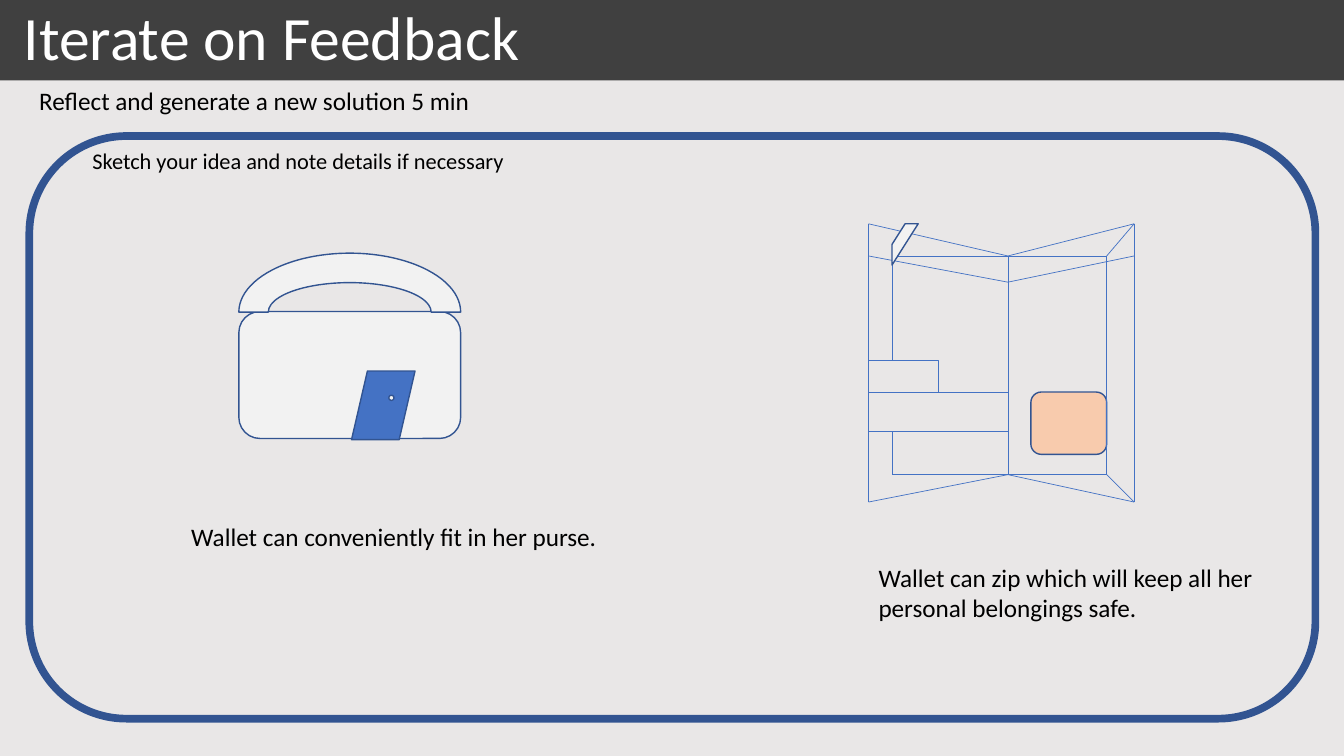
import pptx
import pptx.dml.color
import pptx.enum.shapes
import pptx.enum.text
import pptx.oxml.ns
import pptx.util

Cm, Pt = pptx.util.Cm, pptx.util.Pt
Kind = pptx.enum.shapes.MSO_SHAPE
Link = pptx.enum.shapes.MSO_CONNECTOR
Fit = pptx.enum.text.MSO_AUTO_SIZE
Anchor = pptx.enum.text.MSO_ANCHOR
Align = pptx.enum.text.PP_ALIGN

THEME = {
    "font": "Calibri",
    "color": {"page": "E9E7E7", "bar": "404040", "edge": "325491", "pale": "F2F2F2",
              "blue": "4472C4", "peach": "F8CBAD", "ink": "000000", "white": "FFFFFF"},
    "size": {"title": 44, "body": 18, "hint": 16},
    "line": {"frame": 5.5, "edge": 1, "fold": 0.5},
}

# Content: lengths in cm, boxes as left, top, width, height
WIDE, HIGH = 33.87, 19.05
TITLE = "Iterate on Feedback"
BAR = (0, 0, WIDE, 2.03)
FRAME = (0.74, 3.43, 32.41, 14.68)

NOTES = [  # box, size, wrap, lines
    ((0.74, 2.03, 29.79, 1.02), "body", True, ["Reflect and generate a new solution 5 min"]),
    ((2.08, 3.58, 13.51, 0.94), "hint", True, ["Sketch your idea and note details if necessary"]),
    ((4.57, 13, 10.85, 1.02), "body", False, ["Wallet can conveniently fit in her purse."]),
    ((21.89, 14.05, 10.21, 1.8), "body", False,
     ["Wallet can zip which will keep all her", "personal belongings safe."]),
]

PURSE = [  # kind, box, fill
    (Kind.ROUNDED_RECTANGLE, (6.02, 7.85, 5.59, 3.2), "pale"),
    (Kind.BLOCK_ARC, (6.02, 6.38, 5.59, 2.97), "pale"),
    (Kind.PARALLELOGRAM, (8.86, 9.35, 1.6, 1.73), "blue"),
    (Kind.OVAL, (9.8, 9.96, 0.13, 0.13), "pale"),
]
CARD = (Kind.ROUNDED_RECTANGLE, (25.98, 9.88, 1.91, 1.57), "peach")
ZIP = (Kind.DIAGONAL_STRIPE, (22.48, 5.64, 0.66, 1.04), "pale")

# Wallet grid: named columns and rows, joined by folds such as "A1 C2"
COLS = {"A": 21.89, "B": 22.48, "C": 25.4, "D": 27.89, "E": 28.58}
ROWS = {"1": 5.64, "2": 6.45, "3": 7.11, "4": 9.07,
        "5": 9.88, "6": 10.87, "7": 11.96, "8": 12.65}
FOLDS = [
    "C2 E1", "C2 A1", "A1 A8", "A8 C7", "C7 E8", "E1 E8", "C2 C7",  # cover
    "A5 C5", "A6 C6", "A2 C3", "C3 E2",  # pockets
    "D2 D7", "D2 E1", "D7 E8", "B2 B4", "B6 B7", "B2 D2", "B7 D7",  # lining
]
STEP = "A4 C5"


def paint(name):
    return pptx.dml.color.RGBColor.from_string(THEME["color"][name])


def apply(item, values):
    for key, value in values.items():
        setattr(item, key, value)


def shape(kind, box, fill=None, line="edge"):
    item = slide.shapes.add_shape(kind, *map(Cm, box))
    item.shadow.inherit = False
    if fill:
        item.fill.solid()
        item.fill.fore_color.rgb = paint(fill)
    else:
        item.fill.background()
    if line:
        item.line.color.rgb = paint("edge")
        item.line.width = Pt(THEME["line"][line])
    else:
        item.line.fill.background()
    return item


def write(item, lines, size, color, form, spacing=None):
    frame = item.text_frame
    apply(frame, form)
    for i, line in enumerate(lines):
        para = frame.paragraphs[0] if i == 0 else frame.add_paragraph()
        apply(para, {"alignment": Align.LEFT, "line_spacing": spacing})
        run = para.add_run()
        run.text = line
        apply(run.font, {"name": THEME["font"], "size": Pt(THEME["size"][size])})
        run.font.color.rgb = paint(color)


def fold(pair, kind=Link.STRAIGHT):
    ends = [Cm(grid[key]) for spot in pair.split() for grid, key in zip((COLS, ROWS), spot)]
    item = slide.shapes.add_connector(kind, *ends)
    item.line.color.rgb = paint("blue")
    item.line.width = Pt(THEME["line"]["fold"])
    props = item._element.spPr
    props.append(props.makeelement(pptx.oxml.ns.qn("a:effectLst"), {}))


# Page
deck = pptx.Presentation()
apply(deck, {"slide_width": Cm(WIDE), "slide_height": Cm(HIGH)})
slide = deck.slides.add_slide(deck.slide_layouts[6])
slide.background.fill.solid()
slide.background.fill.fore_color.rgb = paint("page")

# Title bar and frame
bar = shape(Kind.RECTANGLE, BAR, "bar", None)
write(bar, [TITLE], "title", "white",
      {"word_wrap": True, "vertical_anchor": Anchor.MIDDLE, "margin_left": Cm(0.6)}, 0.9)
shape(Kind.ROUNDED_RECTANGLE, FRAME, line="frame")

# Notes
for box, size, wrap, lines in NOTES:
    note = slide.shapes.add_textbox(*map(Cm, box))
    write(note, lines, size, "ink", {"word_wrap": wrap, "auto_size": Fit.SHAPE_TO_FIT_TEXT})

# Purse and wallet
for part in PURSE + [CARD]:
    shape(*part)
for pair in FOLDS:
    fold(pair)
fold(STEP, Link.ELBOW)
shape(*ZIP)

deck.save("out.pptx")
